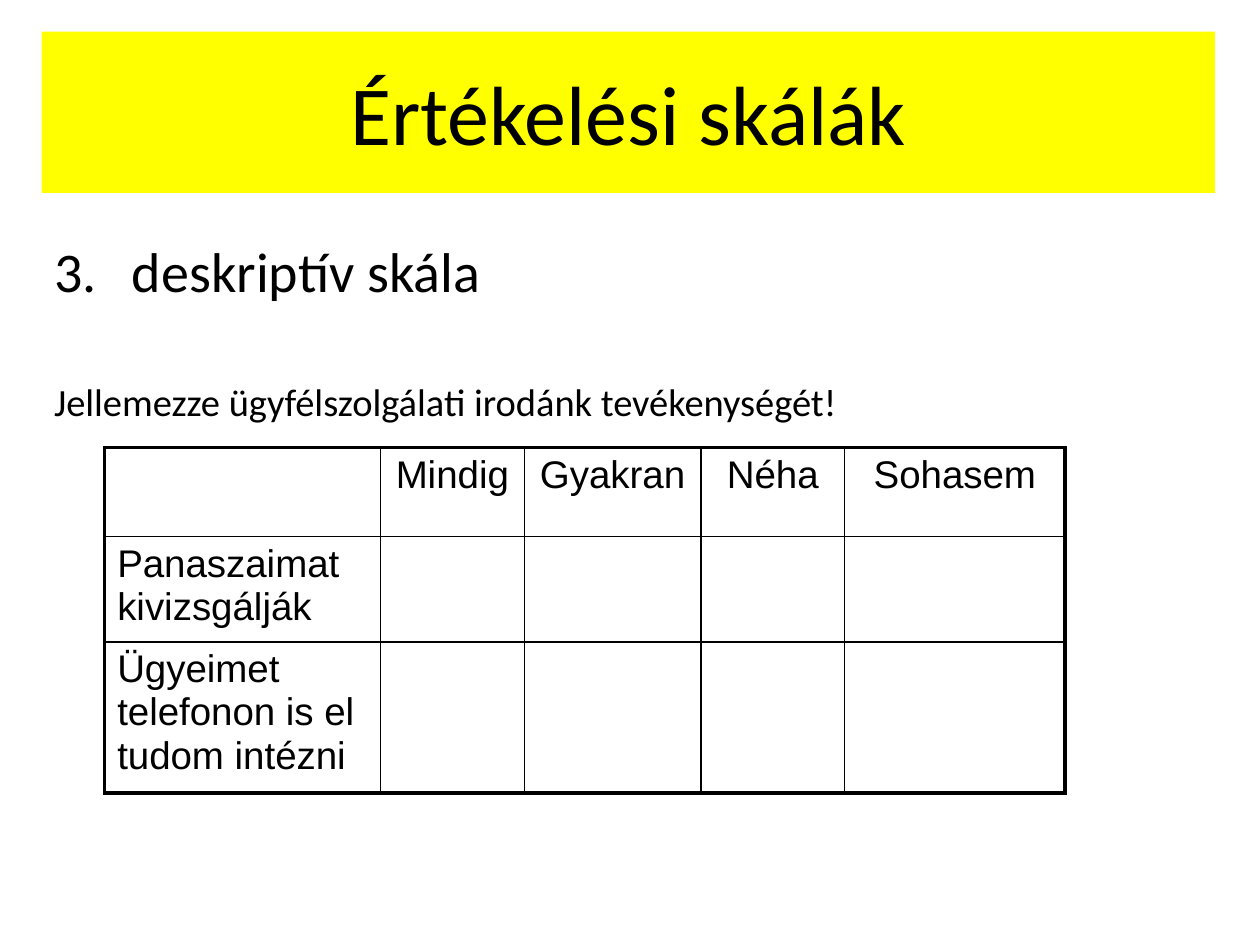
"""Builds a slide on descriptive rating scales with a sample survey table."""
from lxml.etree import SubElement
from pptx import Presentation
from pptx.dml.color import RGBColor
from pptx.enum.text import MSO_ANCHOR as Anchor, PP_ALIGN as Align
from pptx.oxml.ns import qn
from pptx.util import Cm, Pt

BLACK = RGBColor(0, 0, 0)
YELLOW = RGBColor(255, 255, 0)

TITLE = "Értékelési skálák"
HEAD = "deskriptív skála"
TASK = "Jellemezze ügyfélszolgálati irodánk tevékenységét!"
ROWS = [
    ["", "Mindig", "Gyakran", "Néha", "Sohasem"],
    ["Panaszaimat kivizsgálják", "", "", "", ""],
    ["Ügyeimet telefonon is el tudom intézni", "", "", "", ""],
]
WIDTHS = [5.56, 2.9, 3.56, 2.9, 4.44]
HEIGHTS = [1.8, 2.11, 3.05]
BOXES = {
    "title": (0.84, 0.64, 23.65, 3.25),
    "body": (0.84, 4.65, 22.45, 12.29),
    "table": (2.11, 9.02, sum(WIDTHS), sum(HEIGHTS)),
}
THICK, THIN = 2.25, 1


def place(shape, box):
    names = ("left", "top", "width", "height")
    for name, size in zip(names, box):
        setattr(shape, name, Cm(size))


def write(par, text, size, face="Calibri", **form):
    par.text = text
    par.font.color.rgb = BLACK
    for name, value in {"size": Pt(size), "name": face}.items():
        setattr(par.font, name, value)
    for name, value in form.items():
        setattr(par, name, value)


def edge(cell, sides):
    props = cell._tc.get_or_add_tcPr()
    for side, width in sides.items():
        line = SubElement(props, qn(f"a:ln{side}"), w=str(Pt(width)))
        fill = SubElement(line, qn("a:solidFill"))
        SubElement(fill, qn("a:srgbClr"), val=str(BLACK))


def add_title(slide):
    title = slide.shapes.title
    place(title, BOXES["title"])
    title.fill.solid()
    title.fill.fore_color.rgb = YELLOW
    title.text_frame.vertical_anchor = Anchor.MIDDLE
    write(title.text_frame.paragraphs[0], TITLE, 48, alignment=Align.CENTER)


def add_body(slide):
    box = slide.shapes.add_textbox(*map(Cm, BOXES["body"]))
    frame = box.text_frame
    frame.word_wrap = True
    head = frame.paragraphs[0]
    write(head, HEAD, 32)
    props = head._p.get_or_add_pPr()
    props.set("marL", str(Cm(1.57)))
    props.set("indent", str(Cm(-1.57)))
    SubElement(props, qn("a:buFont"), typeface="+mj-lt")
    SubElement(props, qn("a:buAutoNum"), type="arabicPeriod", startAt="3")
    props.append(props.find(qn("a:defRPr")))
    write(frame.add_paragraph(), TASK, 22, space_before=Pt(42))


def add_grid(slide):
    rows, cols = len(ROWS), len(WIDTHS)
    frame = slide.shapes.add_table(rows, cols, *map(Cm, BOXES["table"]))
    table = frame.table
    table.first_row = table.horz_banding = False
    for col, width in zip(table.columns, WIDTHS):
        col.width = Cm(width)
    for r, (row, height) in enumerate(zip(ROWS, HEIGHTS)):
        table.rows[r].height = Cm(height)
        for c, text in enumerate(row):
            cell = table.cell(r, c)
            outer = {"L": c == 0, "R": c == cols - 1,
                     "T": r == 0, "B": r == rows - 1}
            edge(cell, {k: THICK if v else THIN for k, v in outer.items()})
            cell.fill.background()
            align = Align.LEFT if c == 0 else Align.CENTER
            write(cell.text_frame.paragraphs[0], text, 22, "Arial",
                  alignment=align)


def main():
    deck = Presentation()
    deck.slide_width, deck.slide_height = Cm(25.4), Cm(19.05)
    slide = deck.slides.add_slide(deck.slide_layouts[5])
    for add in (add_title, add_body, add_grid):
        add(slide)
    deck.save("out.pptx")


if __name__ == "__main__":
    main()
